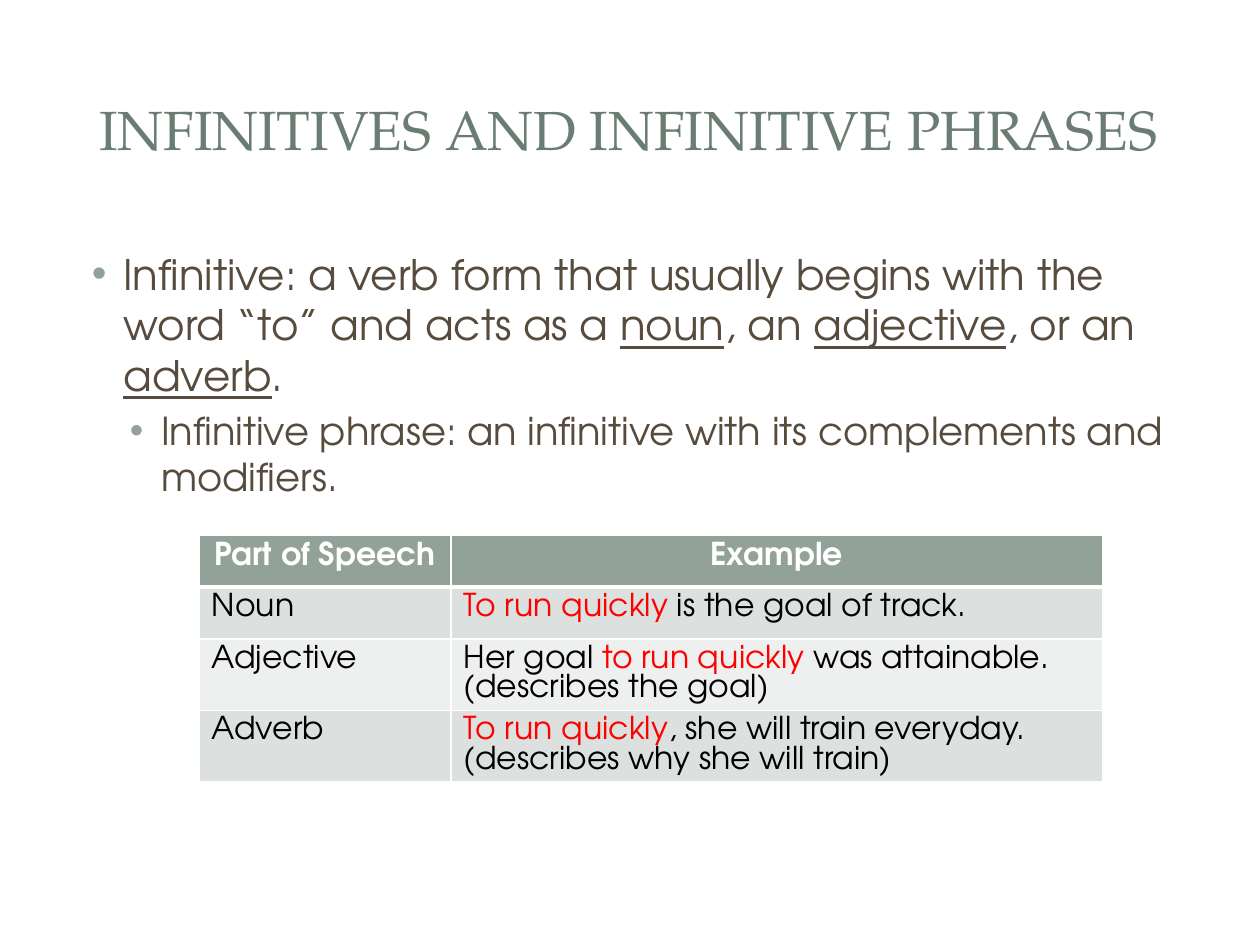
"""Build a grammar slide on infinitives with a table of examples."""
from dataclasses import dataclass

from lxml import etree
from pptx import Presentation
from pptx.dml.color import RGBColor
from pptx.enum.shapes import MSO_SHAPE
from pptx.enum.text import MSO_ANCHOR, MSO_AUTO_SIZE, PP_ALIGN
from pptx.oxml.ns import qn
from pptx.util import Inches, Pt

CENTER, LEFT = PP_ALIGN.CENTER, PP_ALIGN.LEFT
MIDDLE, TOP = MSO_ANCHOR.MIDDLE, MSO_ANCHOR.TOP
NO_FIT = MSO_AUTO_SIZE.NONE
RECTANGLE, ROUNDED = MSO_SHAPE.RECTANGLE, MSO_SHAPE.ROUNDED_RECTANGLE


@dataclass(frozen=True)
class Theme:
    """Fonts, colours and type sizes."""
    heading_font: str = "TeX Gyre Pagella"
    text_font: str = "TeX Gyre Adventor"
    title: str = "6B7D72"
    body: str = "564B3C"
    accent: str = "93A299"
    bands: tuple[str, str] = ("DCE0DE", "EEF0EF")
    white: str = "FFFFFF"
    black: str = "000000"
    highlight: str = "FF0000"
    title_size: float = 31.5
    table_size: float = 18


@dataclass(frozen=True)
class Panel:
    """A white panel behind the content, in inches."""
    kind: MSO_SHAPE
    box: tuple[float, float, float, float]
    opacity: int = 100


@dataclass(frozen=True)
class Span:
    """A piece of text, marked when it is emphasised."""
    text: str
    marked: bool = False


@dataclass(frozen=True)
class Bullet:
    """A bulleted paragraph with its level, size and text indent."""
    level: int
    size: float
    indent: float
    spans: tuple[Span, ...]


THEME = Theme()
PANELS = (
    Panel(ROUNDED, (0.1, 0.11, 9.8, 7.29)),
    Panel(RECTANGLE, (0.3, 0.3, 9.4, 1.45), 83),
    Panel(RECTANGLE, (0.41, 0.41, 9.17, 1.22)),
)
CORNER = 0.02
HANGING = 0.25
BULLETS = (
    Bullet(0, 24, 0.38, (
        Span("Infinitive: a verb form that usually begins with the word “to” and acts as a "),
        Span("noun", True), Span(", an "), Span("adjective", True),
        Span(", or an "), Span("adverb", True), Span("."))),
    Bullet(1, 22, 0.68, (
        Span("Infinitive phrase: an infinitive with its complements and modifiers."),)),
)
HEADERS = ("Part of Speech", "Example")
EXAMPLES = (
    ("Noun", (Span("To run quickly ", True), Span("is the goal of track."))),
    ("Adjective", (Span("Her goal "), Span("to run quickly ", True),
                   Span("was attainable. (describes the goal)"))),
    ("Adverb", (Span("To run quickly", True),
                Span(", she will train everyday. (describes why she will train)"))),
)
COLUMN_WIDTHS = (2, 5.17)
ROW_HEIGHT = 0.41


def add_panels(s) -> None:
    """Draw the white panels behind the placeholders."""
    for i, panel in enumerate(PANELS):
        sp = s.shapes.add_shape(panel.kind, *map(Inches, panel.box))
        sp.shadow.inherit = False
        sp.line.fill.background()
        sp.fill.solid()
        sp.fill.fore_color.rgb = RGBColor.from_string(THEME.white)
        if panel.kind == ROUNDED:
            sp.adjustments[0] = CORNER
        if panel.opacity < 100:
            color = sp._element.spPr.find(f"{qn('a:solidFill')}/{qn('a:srgbClr')}")
            etree.SubElement(color, qn("a:alpha"), val=str(panel.opacity * 1000))
        s.shapes._spTree.insert(2 + i, sp._element)


def place(sp, left: float, top: float, width: float, height: float) -> None:
    """Move and size a shape, in inches."""
    box = {"left": left, "top": top, "width": width, "height": height}
    for name, value in box.items():
        setattr(sp, name, Inches(value))


def add_run(p, text: str, color: str, size: float, **formats) -> None:
    """Append a formatted run to a paragraph."""
    r = p.add_run()
    r.text = text
    r.font.color.rgb = RGBColor.from_string(color)
    values = {"name": THEME.text_font, "size": Pt(size), "bold": False} | formats
    for name, value in values.items():
        setattr(r.font, name, value)


def set_frame(tf, anchor) -> None:
    """Give a text frame fixed size, wrapping and anchor."""
    for name, value in {"word_wrap": True, "auto_size": NO_FIT, "vertical_anchor": anchor}.items():
        setattr(tf, name, value)


def set_bullet(p, indent: float) -> None:
    """Give a paragraph a hanging coloured bullet."""
    pPr = p._p.get_or_add_pPr()
    pPr.set("marL", str(Inches(indent)))
    pPr.set("indent", str(-Inches(HANGING)))
    color = etree.SubElement(pPr, qn("a:buClr"))
    etree.SubElement(color, qn("a:srgbClr"), val=THEME.accent)
    etree.SubElement(pPr, qn("a:buFont"), typeface="Arial")
    etree.SubElement(pPr, qn("a:buChar"), char="•")


def add_title(s) -> None:
    """Fill the title placeholder."""
    sp = s.shapes.title
    place(sp, 0.47, 0.45, 9.03, 1.14)
    set_frame(sp.text_frame, MIDDLE)
    p = sp.text_frame.paragraphs[0]
    p.alignment = CENTER
    add_run(p, "INFINITIVES AND INFINITIVE PHRASES", THEME.title,
            THEME.title_size, name=THEME.heading_font)


def add_bullets(s) -> None:
    """Fill the body placeholder with the definitions."""
    sp = s.placeholders[1]
    place(sp, 0.5, 1.92, 9, 4.78)
    tf = sp.text_frame
    set_frame(tf, TOP)
    for i, bullet in enumerate(BULLETS):
        p = tf.add_paragraph() if i else tf.paragraphs[0]
        p.level = bullet.level
        p.space_before = Pt(bullet.size * 0.2)
        set_bullet(p, bullet.indent)
        for span in bullet.spans:
            add_run(p, span.text, THEME.body, bullet.size, underline=span.marked)


def set_borders(cell, top: float, bottom: float) -> None:
    """Give a cell white borders, with top and bottom widths in points."""
    tcPr = cell._tc.get_or_add_tcPr()
    for side, width in {"L": 1, "R": 1, "T": top, "B": bottom}.items():
        line = etree.SubElement(tcPr, qn(f"a:ln{side}"), w=str(Pt(width)))
        fill = etree.SubElement(line, qn("a:solidFill"))
        etree.SubElement(fill, qn("a:srgbClr"), val=THEME.white)


def fill_cell(cell, spans: tuple[Span, ...], fill: str, color: str, header: bool) -> None:
    """Colour a table cell and write its text."""
    cell.fill.solid()
    cell.fill.fore_color.rgb = RGBColor.from_string(fill)
    p = cell.text_frame.paragraphs[0]
    p.alignment = CENTER if header else LEFT
    for span in spans:
        add_run(p, span.text, THEME.highlight if span.marked else color,
                THEME.table_size, bold=header)


def add_examples(s) -> None:
    """Draw the table of examples by part of speech."""
    rows = len(EXAMPLES) + 1
    table = s.shapes.add_table(
        rows, len(HEADERS), Inches(1.58), Inches(4.25),
        Inches(sum(COLUMN_WIDTHS)), Inches(ROW_HEIGHT * rows)).table
    for column, width in zip(table.columns, COLUMN_WIDTHS):
        column.width = Inches(width)
    for i, header in enumerate(HEADERS):
        set_borders(table.cell(0, i), 1, 3)
        fill_cell(table.cell(0, i), (Span(header),), THEME.accent, THEME.white, True)
    for i, (part, example) in enumerate(EXAMPLES):
        for j, spans in enumerate(((Span(part),), example)):
            cell = table.cell(i + 1, j)
            set_borders(cell, 1 if i else 3, 1)
            fill_cell(cell, spans, THEME.bands[i % 2], THEME.black, False)


def main() -> None:
    """Build and save the slide."""
    prs = Presentation()
    prs.slide_width, prs.slide_height = Inches(10), Inches(7.5)
    s = prs.slides.add_slide(prs.slide_layouts[1])
    add_panels(s)
    add_title(s)
    add_bullets(s)
    add_examples(s)
    prs.save("out.pptx")


if __name__ == "__main__":
    main()
